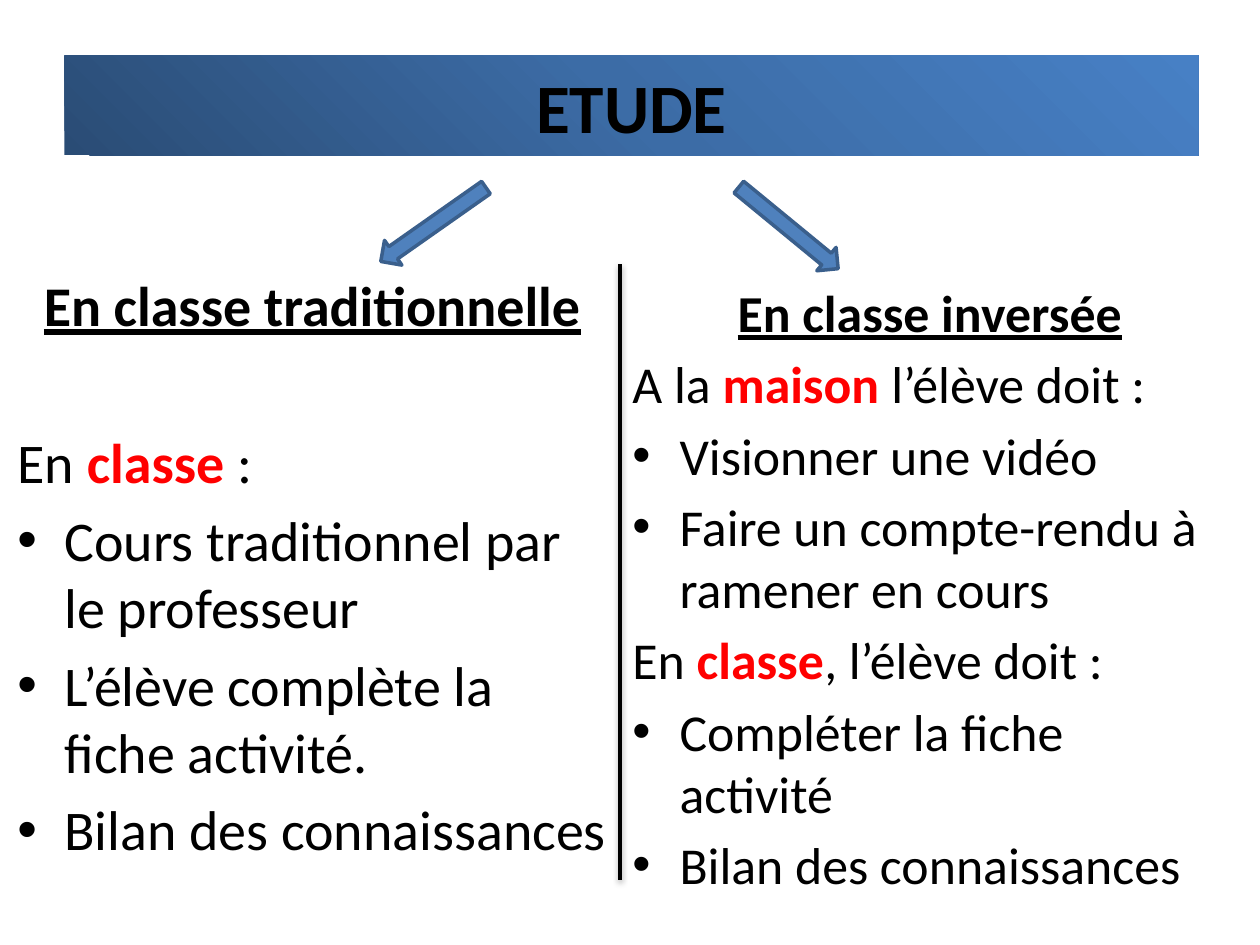
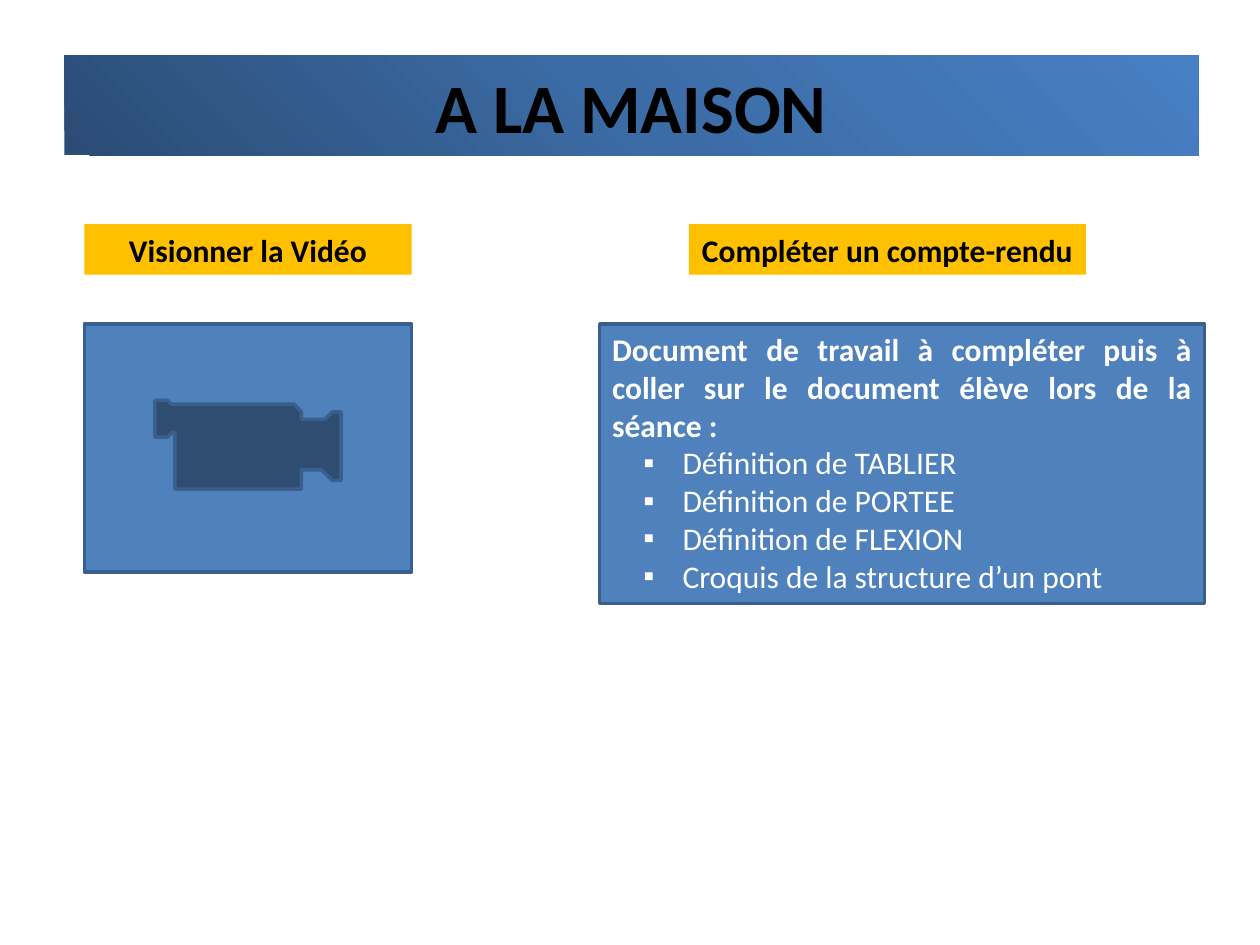
import copy
from dataclasses import dataclass

import pptx
import pptx.dml.color
import pptx.enum.dml
import pptx.enum.shapes
import pptx.enum.text
import pptx.oxml
import pptx.oxml.ns
import pptx.util

Cm = pptx.util.Cm
Pt = pptx.util.Pt
ALIGN = pptx.enum.text.PP_ALIGN
ANCHOR = pptx.enum.text.MSO_ANCHOR
SHAPE = pptx.enum.shapes.MSO_SHAPE


@dataclass(frozen=True)
class Theme:
    font: str = "Calibri"
    ink: str = "000000"
    paper: str = "FFFFFF"
    accent: str = "FF0000"
    blue: str = "4F81BD"
    outline: str = "3A5F8C"
    label: str = "FFC000"
    band: tuple = ("2A4C75", "3C6CA6", "4780C5")
    title_size: float = 39.6
    left_size: float = 32
    right_size: float = 29.6
    small_size: float = 18
    line_width: float = 2


THEME = Theme()
SHADOW = (
    '<a:effectLst {}><a:outerShdw blurRad="40000" dist="20000" dir="5400000" rotWithShape="0">'
    '<a:srgbClr val="000000"><a:alpha val="38000"/></a:srgbClr></a:outerShdw></a:effectLst>'
).format(pptx.oxml.ns.nsdecls("a"))


def rgb(code):
    return pptx.dml.color.RGBColor.from_string(code)


def apply(target, values):
    for name, value in values.items():
        setattr(target, name, value)


def place(left, top, width, height):
    return dict(left=Cm(left), top=Cm(top), width=Cm(width), height=Cm(height))


def add_span(para, text, size, color=THEME.ink, **format_values):
    span = para.add_run()
    span.text = text
    apply(span.font, dict(name=THEME.font, size=Pt(size), **format_values))
    span.font.color.rgb = rgb(color)


def next_para(frame, **format_values):
    first = frame.paragraphs[0]
    para = first if not first.runs else frame.add_paragraph()
    apply(para, format_values)
    return para


def indent(para, margin, bullet=None, hang=None):
    properties = para._p.get_or_add_pPr()
    properties.set("marL", str(Cm(margin)))
    properties.set("indent", str(-Cm(hang or margin)))
    if bullet:
        for tag, name, value in (("buFont", "typeface", "Arial"), ("buChar", "char", bullet)):
            properties.append(pptx.oxml.parse_xml(
                f'<a:{tag} {pptx.oxml.ns.nsdecls("a")} {name}="{value}"/>'))


def add_title(page, text):
    title = page.shapes.title
    apply(title, place(1.3, 1.12, 22.86, 2.01))
    title.fill.gradient()
    title.fill.gradient_angle = 45
    first_stop = title.fill.gradient_stops[0]._gs
    first_stop.addnext(copy.deepcopy(first_stop))
    for stop, color, position in zip(title.fill.gradient_stops, THEME.band, (0, 0.5, 1)):
        stop.color.rgb = rgb(color)
        stop.position = position
    frame = title.text_frame
    apply(frame, dict(auto_size=pptx.enum.text.MSO_AUTO_SIZE.NONE,
                      vertical_anchor=ANCHOR.MIDDLE, word_wrap=True))
    para = next_para(frame, alignment=ALIGN.CENTER)
    add_span(para, text, THEME.title_size, bold=True)


def add_box(page, kind, position, fill, line=None):
    box = page.shapes.add_shape(kind, **place(*position))
    box.shadow.inherit = False
    box.fill.solid()
    box.fill.fore_color.rgb = rgb(fill)
    if line:
        box.line.color.rgb = rgb(line)
        box.line.width = Pt(THEME.line_width)
    else:
        box.line.fill.background()
    return box


def add_arrow(page, left, top, rotation):
    arrow = add_box(page, SHAPE.RIGHT_ARROW, (left, top, 2.59, 0.61), THEME.blue, THEME.outline)
    arrow.rotation = rotation


def add_divider(page, x, top, bottom):
    divider = page.shapes.add_connector(
        pptx.enum.shapes.MSO_CONNECTOR.STRAIGHT, Cm(x), Cm(top), Cm(x), Cm(bottom))
    divider.line.color.rgb = rgb(THEME.ink)
    divider.line.width = Pt(THEME.line_width)
    divider._element.spPr.append(pptx.oxml.parse_xml(SHADOW))


def add_column(page, position, heading, sections, size, gap, heading_gap):
    frame = page.shapes.add_textbox(**place(*position)).text_frame
    frame.word_wrap = True
    para = next_para(frame, alignment=ALIGN.CENTER, space_before=Pt(gap))
    indent(para, 0.95)
    add_span(para, heading, size, bold=True, underline=True)
    for number, (before, keyword, after, items) in enumerate(sections):
        para = next_para(frame, space_before=Pt(gap if number else heading_gap))
        indent(para, 0.95)
        add_span(para, before, size)
        add_span(para, keyword, size, THEME.accent, bold=True)
        add_span(para, after, size)
        for item in items:
            para = next_para(frame, space_before=Pt(gap))
            indent(para, 0.95, "•")
            add_span(para, item, size)


def add_label(page, left, width, text):
    label = add_box(page, SHAPE.RECTANGLE, (left, 4.52, width, 1.02), THEME.label)
    label.text_frame.word_wrap = False
    para = next_para(label.text_frame, alignment=ALIGN.CENTER)
    add_span(para, text, THEME.small_size, bold=True)


def add_worksheet(page, position, intro, items):
    sheet = add_box(page, SHAPE.RECTANGLE, position, THEME.blue, THEME.outline)
    frame = sheet.text_frame
    apply(frame, dict(word_wrap=True, vertical_anchor=ANCHOR.TOP))
    para = next_para(frame, alignment=ALIGN.JUSTIFY)
    add_span(para, intro, THEME.small_size, THEME.paper, bold=True)
    for item in items:
        para = next_para(frame, alignment=ALIGN.LEFT, level=1)
        indent(para, 1.42, "▪", 0.79)
        add_span(para, item, THEME.small_size, THEME.paper)


def build_study(page):
    add_title(page, "ETUDE")
    add_column(page, (12.5, 5.54, 12.5, 12.93), "En classe inversée", (
        ("A la ", "maison", " l’élève doit :",
         ("Visionner une vidéo", "Faire un compte-rendu à ramener en cours")),
        ("En ", "classe", ", l’élève doit :",
         ("Compléter la fiche activité", "Bilan des connaissances")),
    ), THEME.right_size, 5.2, 5.2)
    add_divider(page, 12.5, 5.33, 17.73)
    add_column(page, (0.1, 5.33, 12.4, 12.93), "En classe traditionnelle", (
        ("En ", "classe", " :",
         ("Cours traditionnel par le professeur", "L’élève complète la fiche activité.",
          "Bilan des connaissances")),
    ), THEME.left_size, 6, 51.2)
    add_arrow(page, 14.6, 4.29, 39.4)
    add_arrow(page, 7.44, 4.22, 144.9)


def build_home(page):
    add_title(page, "A LA MAISON")
    add_label(page, 1.7, 6.6, "Visionner la Vidéo")
    add_label(page, 13.89, 8, "Compléter un compte-rendu")
    add_box(page, SHAPE.ACTION_BUTTON_MOVIE, (1.7, 6.53, 6.6, 5), THEME.blue, THEME.outline)
    add_worksheet(
        page, (12.09, 6.53, 12.19, 5.64),
        "Document de travail à compléter puis à coller sur le document élève lors de la séance :",
        [f"Définition de {term}" for term in ("TABLIER", "PORTEE", "FLEXION")]
        + ["Croquis de la structure d’un pont"])


def main():
    deck = pptx.Presentation()
    apply(deck, dict(slide_width=Cm(25.4), slide_height=Cm(19.05)))
    title_only = deck.slide_layouts.get_by_name("Title Only")
    for build in (build_study, build_home):
        build(deck.slides.add_slide(title_only))
    deck.save("out.pptx")


if __name__ == "__main__":
    main()
